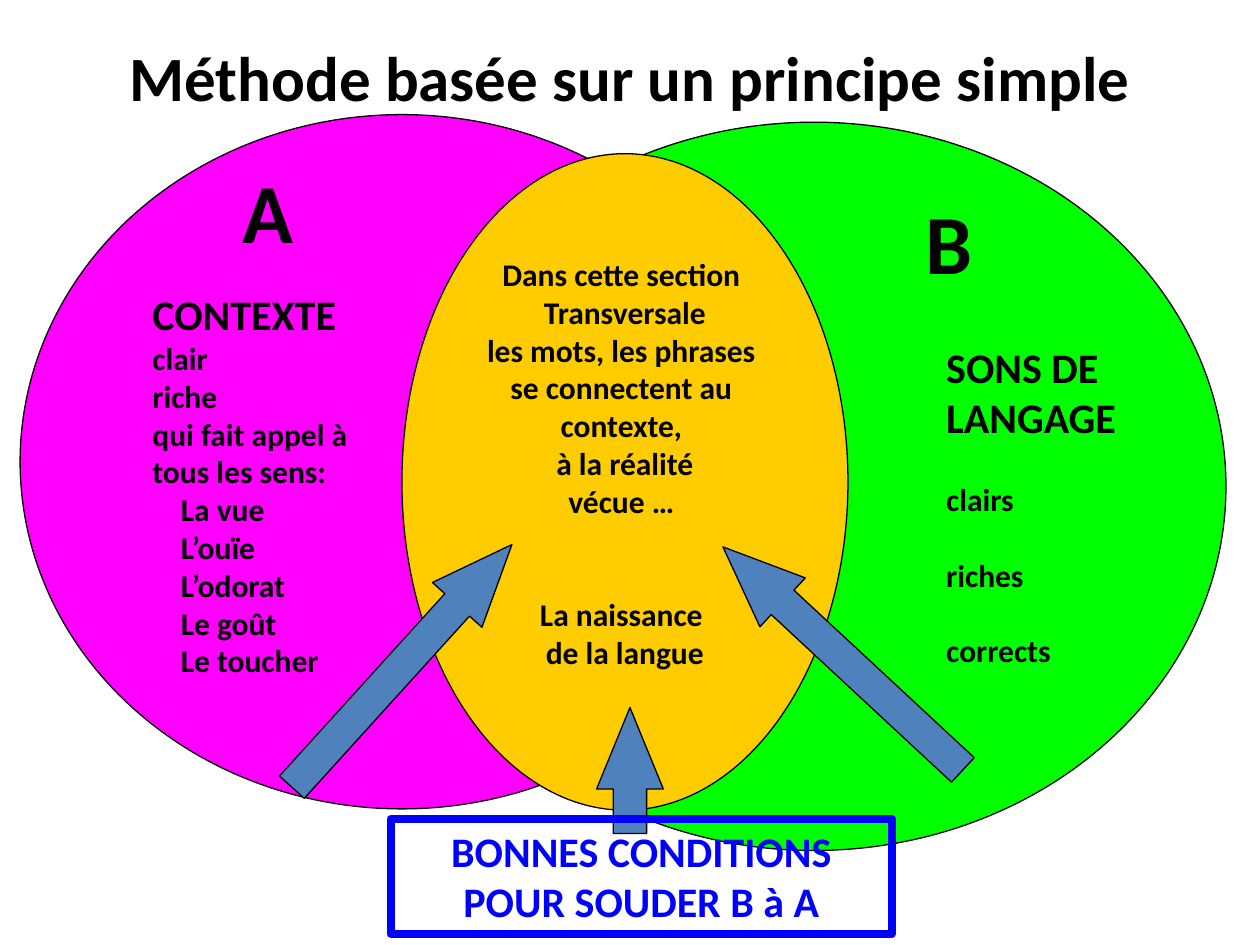
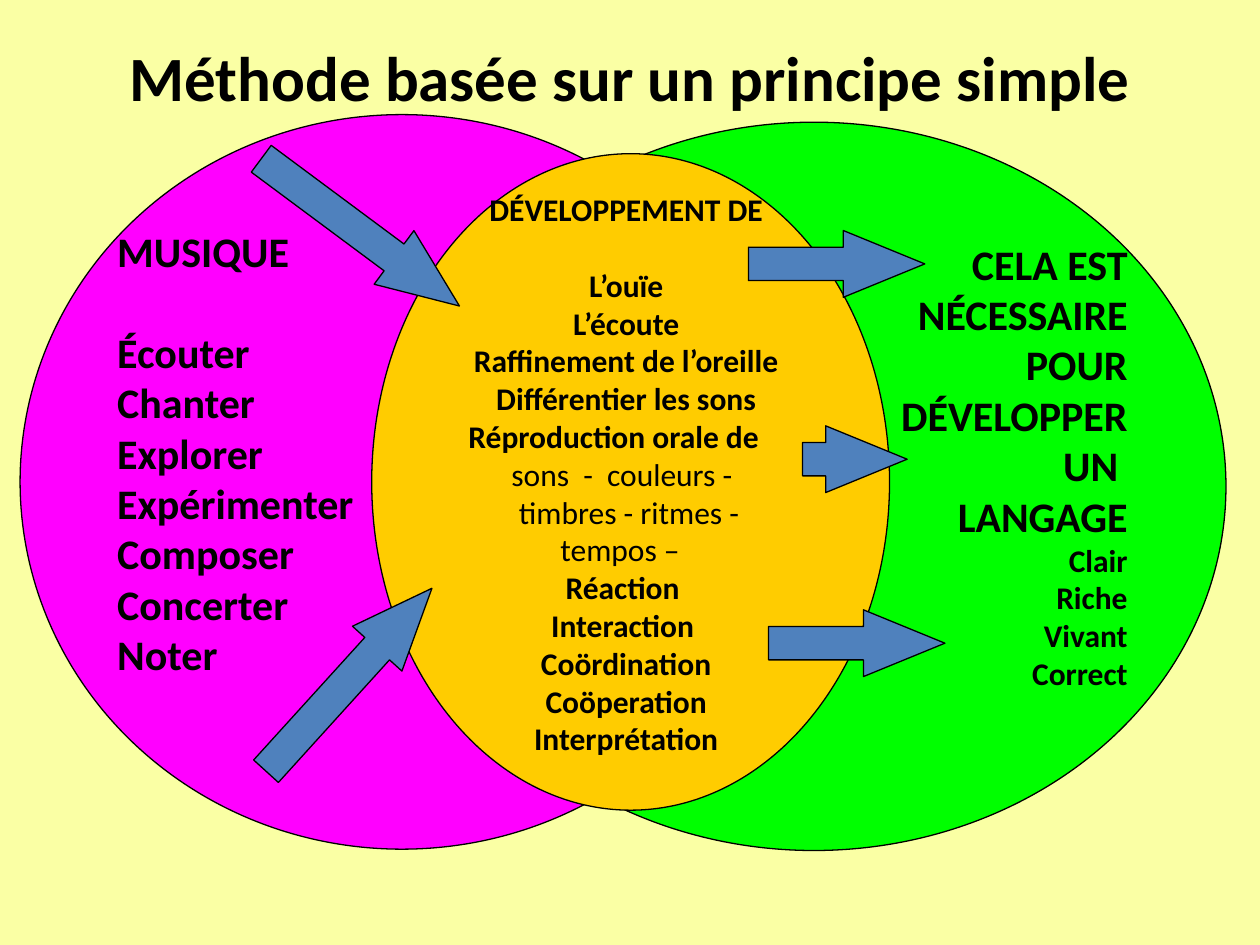
from dataclasses import dataclass
from typing import Any, Iterable

from lxml.etree import SubElement
from pptx import Presentation
from pptx.dml.color import RGBColor
from pptx.enum.shapes import MSO_SHAPE as Shape
from pptx.enum.text import MSO_ANCHOR as Anchor, MSO_AUTO_SIZE as AutoSize, PP_ALIGN as Align
from pptx.oxml.ns import qn
from pptx.util import Inches, Pt

# Shared look: a grid of 100 columns by 75 rows
COLUMNS, ROWS = 100, 75
WIDTH, HEIGHT = Inches(10), Inches(7.5)
FONT = "Calibri"
BLACK, BLUE, STEEL = "000000", "0000FF", "4F81BD"
MAGENTA, GREEN, GOLD = "FF00FF", "00FF00", "FFCC00"
WHITE, CREAM = "FFFFFF", "FAFFA4"
LINE_HEIGHT = 1.2
TITLE = "Méthode basée sur un principe simple"
TWO_CONTENT = 3
ARROW_THICKNESS = 5.3


@dataclass
class Area:
    column: float
    row: float
    columns: float
    rows: float

    def frame(self) -> dict[str, int]:
        return {
            "left": round(WIDTH * self.column / COLUMNS),
            "top": round(HEIGHT * self.row / ROWS),
            "width": round(WIDTH * self.columns / COLUMNS),
            "height": round(HEIGHT * self.rows / ROWS),
        }


@dataclass
class Sphere:
    area: Area
    color: str


@dataclass
class Arrow:
    column: float
    row: float
    length: float
    angle: float = 0


@dataclass
class Line:
    text: str
    size: int = 18
    bold: bool = True
    gap: int = 0        # empty lines left above
    indent: float = 0   # grid columns
    align: Any = None


TITLE_AREA = Area(5, 3, 90, 6.1)
SOUNDS_SPHERE = Sphere(Area(31.9, 9.7, 65.4, 57.8), GREEN)


def rgb(color: str) -> RGBColor:
    return RGBColor.from_string(color)


def apply(target: Any, values: dict[str, Any]) -> None:
    for name, value in values.items():
        setattr(target, name, value)


def lines(*texts: str, **style: Any) -> list[Line]:
    return [Line(text, **style) for text in texts]


def write(shape: Any, content: Iterable[Line], align: Any = Align.LEFT,
          color: str = BLACK, **frame_format: Any) -> None:
    frame = shape.text_frame
    apply(frame, {"word_wrap": True, "auto_size": AutoSize.NONE,
                  "vertical_anchor": Anchor.TOP, **frame_format})
    for number, line in enumerate(content):
        paragraph = frame.add_paragraph() if number else frame.paragraphs[0]
        apply(paragraph, {
            "alignment": line.align or align,
            "space_before": Pt(line.gap * line.size * LINE_HEIGHT),
        })
        properties = paragraph._p.get_or_add_pPr()
        properties.set("marL", str(round(WIDTH * line.indent / COLUMNS)))
        properties.set("indent", "0")
        SubElement(properties, qn("a:buNone"))
        run = paragraph.add_run()
        run.text = line.text
        apply(run.font, {"name": FONT, "size": Pt(line.size), "bold": line.bold})
        run.font.color.rgb = rgb(color)


def draw(slide: Any, kind: Any, area: Area, fill: str | None,
         border: str = BLACK, border_width: float = 0.75) -> Any:
    shape = slide.shapes.add_shape(kind, **area.frame())
    shape.shadow.inherit = False
    if fill:
        shape.fill.solid()
        shape.fill.fore_color.rgb = rgb(fill)
    else:
        shape.fill.background()
    shape.line.color.rgb = rgb(border)
    shape.line.width = Pt(border_width)
    return shape


def draw_arrows(slide: Any, arrows: Iterable[Arrow]) -> None:
    for arrow in arrows:
        area = Area(arrow.column, arrow.row, arrow.length, ARROW_THICKNESS)
        pointer = draw(slide, Shape.RIGHT_ARROW, area, STEEL)
        pointer.adjustments[0], pointer.adjustments[1] = 0.5, 1.22
        pointer.rotation = arrow.angle


def add_text(slide: Any, area: Area, content: list[Line], **style: Any) -> None:
    write(slide.shapes.add_textbox(**area.frame()), content, **style)


def fill_list(slide: Any, index: int, area: Area, content: list[Line],
              align: Any = Align.LEFT) -> None:
    """Move a body placeholder in front of the spheres and fill it."""
    body = slide.placeholders[index]
    apply(body, area.frame())
    slide.shapes._spTree.append(body._element)
    write(body, content, align)


def start_slide(deck: Any, background: str, spheres: list[Sphere]) -> tuple[Any, list[Any]]:
    slide = deck.slides.add_slide(deck.slide_layouts[TWO_CONTENT])
    slide.background.fill.solid()
    slide.background.fill.fore_color.rgb = rgb(background)
    apply(slide.shapes.title, TITLE_AREA.frame())
    write(slide.shapes.title, lines(TITLE, size=36), Align.CENTER,
          vertical_anchor=Anchor.MIDDLE)
    drawn = [draw(slide, Shape.OVAL, sphere.area, sphere.color) for sphere in spheres]
    return slide, drawn


def build_context_slide(deck: Any) -> None:
    slide, (_, _, overlap) = start_slide(deck, WHITE, [
        Sphere(Area(1.6, 9.1, 60.6, 55.1), MAGENTA),
        SOUNDS_SPHERE,
        Sphere(Area(31.9, 12.2, 35.4, 52.1), GOLD),
    ])

    # Shared section
    write(overlap, [
        *lines("Dans cette section ", "Transversale", "les mots, les phrases ",
               "se connectent au ", "contexte, ", "à la réalité", "vécue … "),
        Line("La naissance ", gap=2),
        Line("de la langue"),
    ], Align.CENTER, word_wrap=False, vertical_anchor=Anchor.MIDDLE,
        margin_bottom=Inches(0.35))
    draw_arrows(slide, [
        Arrow(18.9, 50.2, 26, 312.2),
        Arrow(53.9, 49.6, 26, 222.9),
        Arrow(45, 58.5, 10, 270),
    ])

    # Context and language sounds
    fill_list(slide, 1, Area(11.1, 22.4, 21.1, 38.4), [
        Line("CONTEXTE", size=24),
        *lines("clair", "riche", "qui fait appel à tous les sens:"),
        *lines("La vue", "L’ouïe", "L’odorat", "Le goût", "Le toucher", indent=2.25),
    ])
    fill_list(slide, 2, Area(74.1, 26.6, 18, 27.4), [
        *lines("SONS DE", "LANGAGE", size=24),
        *lines("clairs", "riches", "corrects", gap=1),
    ])
    for letter, column, row in (("A", 18.3, 12.2), ("B", 72.5, 14.6)):
        add_text(slide, Area(column, row, 5.7, 9.1), lines(letter, size=48))

    # Conclusion
    conclusion = draw(slide, Shape.RECTANGLE, Area(31, 65, 39.8, 9.1), None, BLUE, 4.5)
    write(conclusion, lines("BONNES CONDITIONS POUR SOUDER B à A", size=24),
          Align.CENTER, BLUE)


def build_music_slide(deck: Any) -> None:
    slide, _ = start_slide(deck, CREAM, [
        Sphere(Area(1.6, 9.1, 60.6, 58.3), MAGENTA),
        SOUNDS_SPHERE,
        Sphere(Area(29.5, 12.2, 41.1, 52.1), GOLD),
    ])
    draw_arrows(slide, [
        Arrow(17.9, 51.3, 19.6, 312.2),
        Arrow(18.8, 15.8, 19.6, 36.6),
        Arrow(59.4, 18.3, 14),
        Arrow(63.7, 33.8, 8.3),
        Arrow(61, 48.4, 14),
    ])

    # Music and language needs
    fill_list(slide, 1, Area(8.3, 17.4, 21.1, 43.5), [
        Line("MUSIQUE", size=24),
        Line("Écouter", size=24, gap=1),
        *lines("Chanter", "Explorer", "Expérimenter", "Composer", "Concerter",
               "Noter", size=24),
    ])
    fill_list(slide, 2, Area(70.5, 18.4, 20, 37.4), [
        *lines("CELA EST NÉCESSAIRE POUR", "DÉVELOPPER", "UN ", "LANGAGE", size=24),
        *lines("Clair", "Riche", "Vivant", "Correct"),
    ], Align.RIGHT)

    # Developed skills
    details = (("sons  -  couleurs -", 3.4), ("timbres - ritmes -", 4), ("tempos –", 7.3))
    add_text(slide, Area(36.2, 14.6, 27, 49.5), [
        Line("DÉVELOPPEMENT DE"),
        Line("L’ouïe", gap=1),
        *lines("L’écoute", "Raffinement de l’oreille", "Différentier les sons"),
        Line("Réproduction orale de", align=Align.LEFT),
        *(Line(text, bold=False, indent=indent, align=Align.LEFT)
          for text, indent in details),
        *lines("Réaction ", "Interaction ", "Coördination", "Coöperation",
               "Interprétation"),
    ], align=Align.CENTER)


def main() -> None:
    deck = Presentation()
    apply(deck, {"slide_width": WIDTH, "slide_height": HEIGHT})
    build_context_slide(deck)
    build_music_slide(deck)
    deck.save("out.pptx")


if __name__ == "__main__":
    main()
